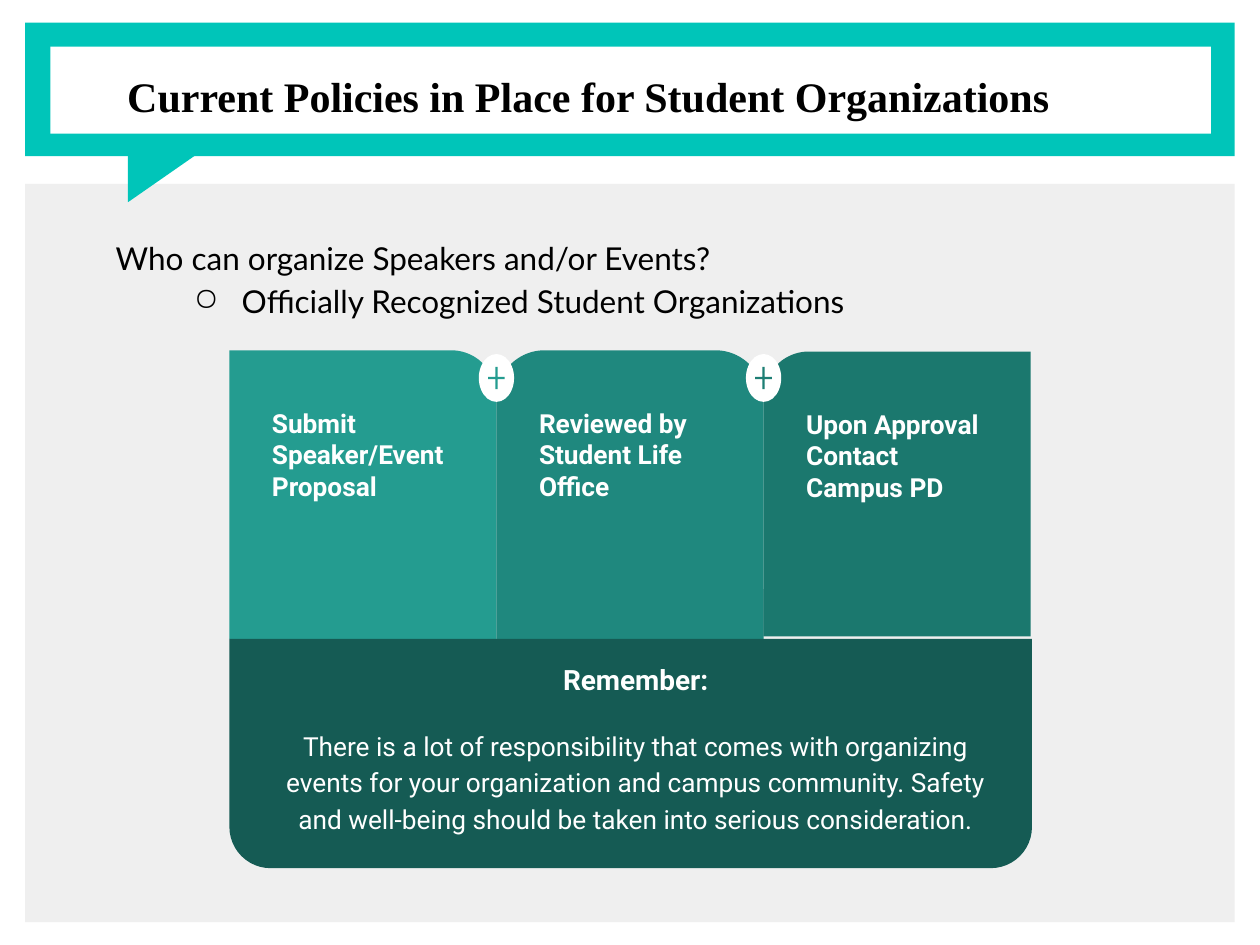
from dataclasses import dataclass

import pptx
import pptx.dml.color
import pptx.enum.shapes
import pptx.enum.text
import pptx.oxml
import pptx.oxml.ns
import pptx.util

Inches = pptx.util.Inches
Shape = pptx.enum.shapes.MSO_SHAPE
Align = pptx.enum.text.PP_ALIGN
Box = tuple[float, float, float, float]


@dataclass(frozen=True)
class Theme:
    white: str = "FFFFFF"
    black: str = "000000"
    panel: str = "EFEFEF"
    banner: str = "00C5B9"
    reminder: str = "155B54"
    title_font: str = "Times New Roman"
    body_font: str = "Lato"
    card_font: str = "Roboto"
    title_size: int = 24
    body_size: int = 18
    heading_size: int = 16
    card_size: int = 15


@dataclass(frozen=True)
class Step:
    text: str
    shape: pptx.enum.shapes.MSO_SHAPE
    corners: tuple[float, ...]
    fill: str
    top: float = 2.78
    height: float = 2.29
    flipped: bool = False


THEME = Theme()
STEP_LEFT, STEP_WIDTH = 1.82, 2.12
STEPS = (
    Step("Submit Speaker/Event Proposal", Shape.ROUND_1_RECTANGLE, (0.17,), "249C90"),
    Step("Reviewed by Student Life Office", Shape.ROUND_2_SAME_RECTANGLE, (0.18, 0), "1F887E"),
    Step("Upon Approval Contact Campus PD", Shape.ROUND_1_RECTANGLE, (0.17,), "1B786E",
         top=2.79, height=2.26, flipped=True),
)
PLUS_COLORS = ("249C90", "1D7E74")


def add_block(slide, kind, box: Box, fill: str, corners=(), rotation: float = 0, flipped: bool = False) -> None:
    block = slide.shapes.add_shape(kind, *map(Inches, box))
    block.shadow.inherit = False
    block.fill.solid()
    block.fill.fore_color.rgb = pptx.dml.color.RGBColor.from_string(fill)
    block.line.fill.background()
    block.rotation = rotation
    for index, corner in enumerate(corners):
        block.adjustments[index] = corner
    if flipped:
        block._element.spPr.get_or_add_xfrm().set("flipH", "1")


def prepare_frame(frame) -> None:
    frame.word_wrap = True
    frame.auto_size = pptx.enum.text.MSO_AUTO_SIZE.NONE
    frame.margin_left = frame.margin_right = Inches(0.1)
    frame.margin_top = frame.margin_bottom = Inches(0.1)


def write(paragraph, text: str, font: str, size: int, color: str,
          bold: bool = False, align=Align.LEFT, spacing: float = 1.0) -> None:
    paragraph.alignment = align
    paragraph.line_spacing = spacing
    run = paragraph.add_run()
    run.text = text
    run.font.name = font
    run.font.size = pptx.util.Pt(size)
    run.font.bold = bold
    run.font.color.rgb = pptx.dml.color.RGBColor.from_string(color)


def add_text_frame(slide, box: Box):
    frame = slide.shapes.add_textbox(*map(Inches, box)).text_frame
    prepare_frame(frame)
    return frame


def add_bullet(paragraph, symbol: str, margin: float, indent: float) -> None:
    properties = paragraph._p.get_or_add_pPr()
    properties.set("marL", str(Inches(margin)))
    properties.set("indent", str(Inches(indent)))
    bullet = pptx.oxml.parse_xml(f'<a:buChar {pptx.oxml.ns.nsdecls("a")} char="{symbol}"/>')
    properties.append(bullet)


def add_banner(slide) -> None:
    add_block(slide, Shape.RECTANGLE, (0.2, 1.46, 9.6, 5.86), THEME.panel)
    add_block(slide, Shape.RECTANGLE, (0.2, 0.18, 9.6, 1.06), THEME.banner)
    add_block(slide, Shape.RIGHT_TRIANGLE, (1.12, 1.02, 0.48, 0.69), THEME.banner, rotation=90)
    add_block(slide, Shape.RECTANGLE, (0.4, 0.37, 9.21, 0.69), THEME.white)


def add_title(slide) -> None:
    title = slide.shapes.title
    title.left, title.top, title.width, title.height = map(Inches, (0.91, 0.2, 8.7, 1.06))
    prepare_frame(title.text_frame)
    title.text_frame.vertical_anchor = pptx.enum.text.MSO_ANCHOR.MIDDLE
    write(title.text_frame.paragraphs[0], "Current Policies in Place for Student Organizations",
          THEME.title_font, THEME.title_size, THEME.black, bold=True, spacing=1.15)
    # The placeholder comes first in the tree, so lift it above the banner.
    title._element.getparent().append(title._element)


def add_question(slide) -> None:
    frame = add_text_frame(slide, (0.82, 1.75, 8.35, 1))
    style = (THEME.body_font, THEME.body_size, THEME.black)
    write(frame.paragraphs[0], "Who can organize Speakers and/or Events?", *style, spacing=1.15)
    answer = frame.add_paragraph()
    answer.level = 1
    write(answer, "Officially Recognized Student Organizations", *style, spacing=1.15)
    add_bullet(answer, "○", 1, -0.38)


def add_step(slide, step: Step, left: float) -> None:
    add_block(slide, step.shape, (left, step.top, STEP_WIDTH, step.height), step.fill,
              step.corners, flipped=step.flipped)
    frame = add_text_frame(slide, (left + 0.24, step.top + 0.35, 1.64, 1.2))
    write(frame.paragraphs[0], step.text, THEME.card_font, THEME.card_size, THEME.white, bold=True)


def add_plus(slide, center: float, color: str) -> None:
    add_block(slide, Shape.OVAL, (center - 0.14, 2.81, 0.28, 0.38), THEME.white)
    add_block(slide, Shape.MATH_PLUS, (center - 0.09, 2.88, 0.18, 0.24), color, (0.1,))


def add_reminder(slide) -> None:
    add_block(slide, Shape.ROUND_2_SAME_RECTANGLE, (STEP_LEFT, 5.07, 6.37, 1.82),
              THEME.reminder, (0.18, 0), rotation=180)
    heading = add_text_frame(slide, (2.87, 5.16, 4.35, 0.51))
    write(heading.paragraphs[0], "Remember:", THEME.card_font, THEME.heading_size,
          THEME.white, bold=True, align=Align.CENTER)
    message = add_text_frame(slide, (2.13, 5.66, 5.83, 1.06))
    write(message.paragraphs[0],
          "There is a lot of responsibility that comes with organizing events for your "
          "organization and campus community. Safety and well-being should be taken into "
          "serious consideration.",
          THEME.card_font, THEME.card_size, THEME.white, align=Align.CENTER, spacing=1.15)


def main() -> None:
    deck = pptx.Presentation()
    deck.slide_width, deck.slide_height = Inches(10), Inches(7.5)
    slide = deck.slides.add_slide(deck.slide_layouts[5])
    add_banner(slide)
    add_title(slide)
    add_question(slide)
    for index, step in enumerate(STEPS):
        add_step(slide, step, STEP_LEFT + index * STEP_WIDTH)
    for index, color in enumerate(PLUS_COLORS, start=1):
        add_plus(slide, STEP_LEFT + index * STEP_WIDTH, color)
    add_reminder(slide)
    deck.save("out.pptx")


if __name__ == "__main__":
    main()
